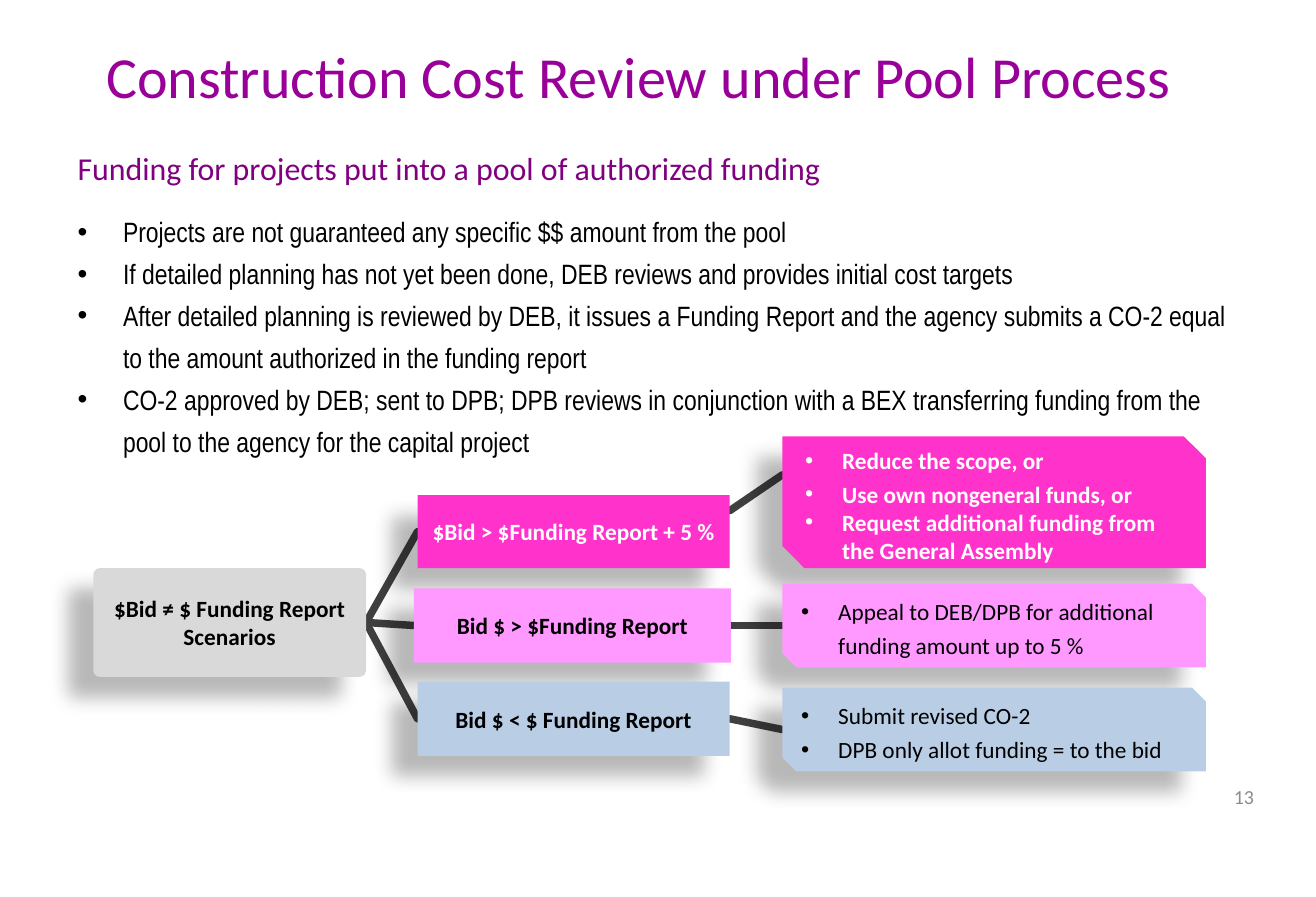
from dataclasses import dataclass

from lxml.etree import SubElement
from pptx import Presentation
from pptx.dml.color import RGBColor
from pptx.enum.shapes import MSO_CONNECTOR as Line, MSO_SHAPE as Shape
from pptx.enum.text import MSO_ANCHOR as Anchor, PP_ALIGN as Align
from pptx.oxml.ns import qn
from pptx.util import Inches, Pt


@dataclass(frozen=True)
class Theme:
    title: str = "990099"
    lead: str = "800080"
    black: str = "000000"
    white: str = "FFFFFF"
    number: str = "8C8C8C"
    line: str = "404040"
    grey: str = "D9D9D9"
    hot: str = "FF33CC"
    pink: str = "FF99FF"
    blue: str = "B9CDE5"
    font: str = "Calibri"
    narrow: str = "Arial Narrow"
    title_size: float = 35
    lead_size: float = 19.2
    body_size: float = 16.8
    box_size: float = 14
    number_size: float = 12


@dataclass(frozen=True)
class Area:
    """Place on a grid of 110 columns by 75 rows."""
    col: float
    row: float
    cols: float
    rows: float

    @property
    def emu(self):
        return [grid(v) for v in (self.col, self.row, self.cols, self.rows)]


@dataclass(frozen=True)
class Scenario:
    case: str
    case_area: Area
    actions: tuple
    spacings: tuple
    action_area: Area
    fill: str
    color: str
    bold_actions: bool
    link_rows: tuple


T = Theme()
COLS, ROWS = 110, 75
CELL = Inches(11) // COLS
ACTION_COL, ACTION_COLS = 65.4, 35.4
ROOT = Area(7.8, 47.5, 22.8, 9.1)

SCENARIOS = (
    Scenario("$Bid > $Funding Report + 5 %", Area(34.9, 41.4, 26.1, 6.1),
             ("Reduce the scope, or", "Use own nongeneral funds, or",
              "Request additional funding from the General Assembly"), (1.2, 1.2, 1),
             Area(ACTION_COL, 36.5, ACTION_COLS, 11), T.hot, T.white, True, (42.7, 39.7)),
    Scenario("Bid $ > $Funding Report", Area(34.6, 49.2, 26.5, 6.2),
             ("Appeal to DEB/DPB for additional funding amount up to 5 %",), (1.2,),
             Area(ACTION_COL, 48.8, ACTION_COLS, 7), T.pink, T.black, False, (52.3, 52.3)),
    Scenario("Bid $ < $ Funding Report", Area(34.9, 57, 26.1, 6.2),
             ("Submit revised CO-2", "DPB only allot funding = to the bid"), (1.2, 1.2),
             Area(ACTION_COL, 57.5, ACTION_COLS, 7), T.blue, T.black, False, (60.1, 61)),
)

BODY = (
    "Projects are not guaranteed any specific $$ amount from the pool",
    "If detailed planning has not yet been done, DEB reviews and provides initial cost targets",
    "After detailed planning is reviewed by DEB, it issues a Funding Report and the agency "
    "submits a CO-2 equal to the amount authorized in the funding report",
    "CO-2 approved by DEB; sent to DPB; DPB reviews in conjunction with a BEX transferring "
    "funding from the pool to the agency for the capital project",
)


def grid(cells: float) -> int:
    return round(cells * CELL)


def style(p, size: float, color: str, font: str = T.font, bold: bool = False,
          align=Align.LEFT, spacing: float = 1) -> None:
    p.alignment = align
    p.line_spacing = spacing
    for r in p.runs:
        r.font.size, r.font.name, r.font.bold = Pt(size), font, bold
        r.font.color.rgb = RGBColor.from_string(color)


def bullet(p, indent: float) -> None:
    pPr = p._p.get_or_add_pPr()
    pPr.set("marL", str(Inches(indent)))
    pPr.set("indent", str(-Inches(indent)))
    SubElement(pPr, qn("a:buFont")).set("typeface", "Arial")
    SubElement(pPr, qn("a:buChar")).set("char", "•")


def add_text(s, area: Area, text: str, anchor=Anchor.TOP):
    tf = s.shapes.add_textbox(*area.emu).text_frame
    tf.word_wrap = True
    tf.vertical_anchor = anchor
    tf.text = text
    return tf


def add_shadow(sp) -> None:
    sp.shadow.inherit = False
    effects = sp.element.spPr.find(qn("a:effectLst"))
    shadow = SubElement(effects, qn("a:outerShdw"), blurRad=str(Pt(11.8)), dist=str(Pt(19.7)),
                        dir=str(141 * 60000), algn="tr", rotWithShape="0")
    color = SubElement(shadow, qn("a:srgbClr"), val=T.black)
    SubElement(color, qn("a:alpha"), val="28000")


def add_box(s, kind, area: Area, text: str, fill: str):
    sp = s.shapes.add_shape(kind, *area.emu)
    sp.fill.solid()
    sp.fill.fore_color.rgb = RGBColor.from_string(fill)
    sp.line.fill.background()
    add_shadow(sp)
    tf = sp.text_frame
    tf.word_wrap = True
    tf.vertical_anchor = Anchor.MIDDLE
    tf.text = text
    return sp


def add_label(s, kind, area: Area, text: str, fill: str, color: str):
    sp = add_box(s, kind, area, text, fill)
    for p in sp.text_frame.paragraphs:
        style(p, T.box_size, color, bold=True, align=Align.CENTER)
    return sp


def add_link(s, x1: float, y1: float, x2: float, y2: float):
    link = s.shapes.add_connector(Line.STRAIGHT, *map(grid, (x1, y1, x2, y2)))
    link.line.color.rgb = RGBColor.from_string(T.line)
    link.line.width = Pt(4.5)
    link.line._get_or_add_ln().set("cap", "rnd")
    SubElement(link.element.spPr, qn("a:effectLst"))
    # Links lie behind the boxes
    link.element.getparent().insert(2, link.element)
    return link


def add_scenario(s, root, sc: Scenario) -> None:
    case = add_label(s, Shape.RECTANGLE, sc.case_area, sc.case, sc.fill, sc.color)
    action = add_box(s, Shape.SNIP_2_DIAG_RECTANGLE, sc.action_area,
                     "\n".join(sc.actions), sc.fill)
    for p, spacing in zip(action.text_frame.paragraphs, sc.spacings):
        style(p, T.box_size, sc.color, bold=sc.bold_actions, spacing=spacing)
        bullet(p, 0.31)
    a = sc.case_area
    link = add_link(s, ROOT.col + ROOT.cols, ROOT.row + ROOT.rows / 2, a.col, a.row + a.rows / 2)
    link.begin_connect(root, 3)
    link.end_connect(case, 1)
    start, end = sc.link_rows
    add_link(s, a.col + a.cols, start, ACTION_COL, end)


def main() -> None:
    prs = Presentation()
    prs.slide_width, prs.slide_height = CELL * COLS, CELL * ROWS
    s = prs.slides.add_slide(prs.slide_layouts[6])

    # Title
    tf = add_text(s, Area(3.4, 2.9, 100, 7), "Construction Cost Review under Pool Process")
    style(tf.paragraphs[0], T.title_size, T.title, align=Align.CENTER)

    # Lead line and bullets
    tf = add_text(s, Area(5.5, 11.1, 97.9, 30.1),
                  "\n".join(("Funding for projects put into a pool of authorized funding", *BODY)))
    lead, *points = tf.paragraphs
    style(lead, T.lead_size, T.lead, spacing=1.25)
    lead.space_after = Pt(12)
    for p in points:
        style(p, T.body_size, T.black, T.narrow, spacing=1.25)
        bullet(p, 0.38)

    # Scenario tree
    root = add_label(s, Shape.ROUNDED_RECTANGLE, ROOT,
                     "$Bid ≠ $ Funding Report\nScenarios", T.grey, T.black)
    root.adjustments[0] = 0.06
    for sc in SCENARIOS:
        add_scenario(s, root, sc)

    # Slide number
    tf = add_text(s, Area(80.1, 64.6, 25.7, 4), "13", Anchor.MIDDLE)
    style(tf.paragraphs[0], T.number_size, T.number, align=Align.RIGHT)

    prs.save("out.pptx")


if __name__ == "__main__":
    main()
